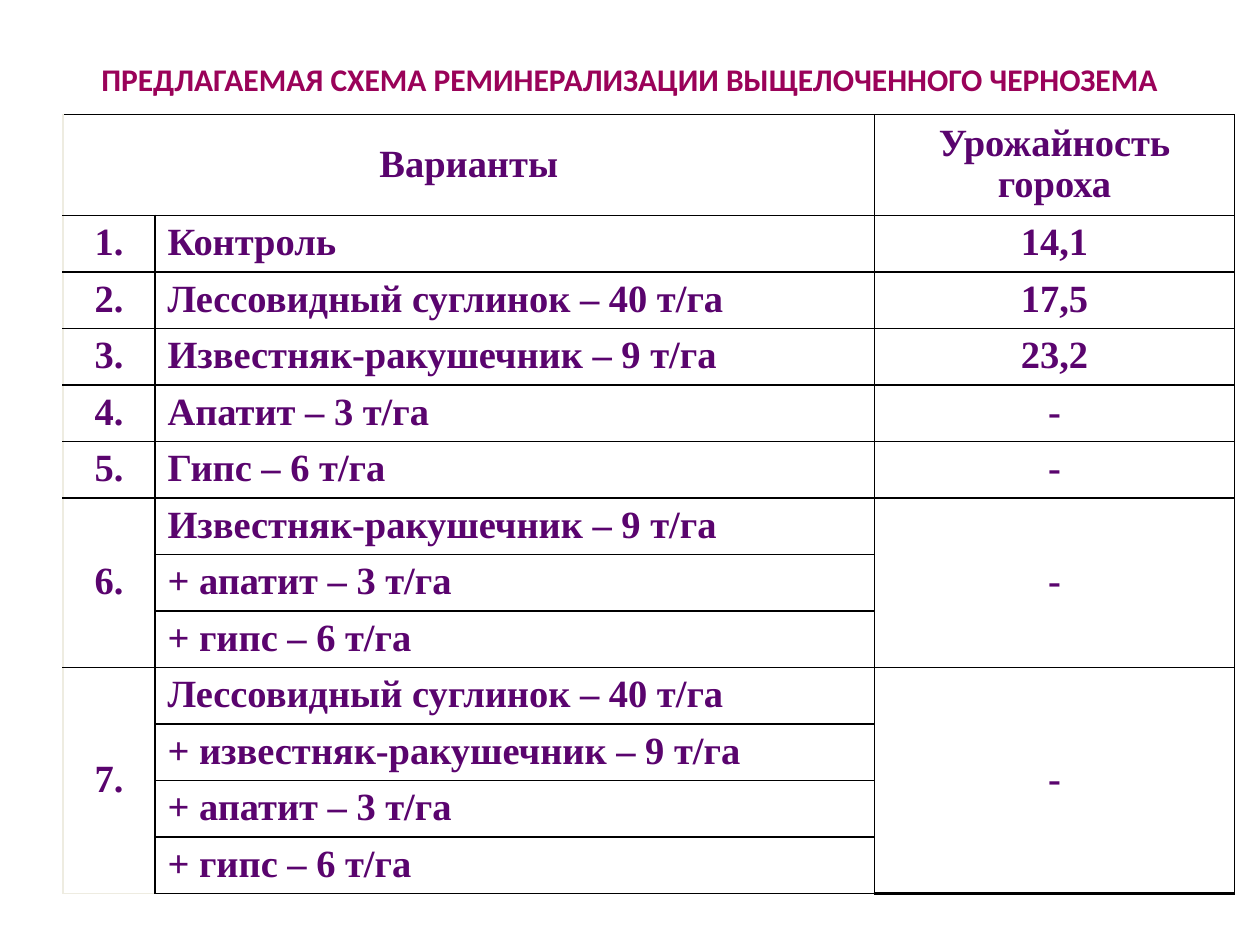
import pptx
import pptx.dml.color
import pptx.enum.text
import pptx.oxml.ns
import pptx.util
from lxml import etree
from pptx.util import Inches

COLORS = {"title": "9A0259", "text": "5A046E", "line": "000000", "pale": "EEECE1"}
ALIGN = pptx.enum.text.PP_ALIGN
MIDDLE = pptx.enum.text.MSO_ANCHOR.MIDDLE

TITLE_FONT = {"name": "Calibri", "size": pptx.util.Pt(18), "bold": True}
TABLE_FONT = {"name": "Times New Roman", "size": pptx.util.Pt(22), "bold": True}

TITLE = "ПРЕДЛАГАЕМАЯ СХЕМА РЕМИНЕРАЛИЗАЦИИ ВЫЩЕЛОЧЕННОГО ЧЕРНОЗЕМА"
HEADINGS = ("Варианты", "Урожайность гороха")
VARIANTS = [
    (["Контроль"], "14,1"),
    (["Лессовидный суглинок – 40 т/га"], "17,5"),
    (["Известняк-ракушечник – 9 т/га"], "23,2"),
    (["Апатит – 3 т/га"], "-"),
    (["Гипс – 6 т/га"], "-"),
    (["Известняк-ракушечник – 9 т/га", "+ апатит – 3 т/га", "+ гипс – 6 т/га"], "-"),
    (["Лессовидный суглинок – 40 т/га", "+ известняк-ракушечник – 9 т/га",
      "+ апатит – 3 т/га", "+ гипс – 6 т/га"], "-"),
]
COLUMN_WIDTHS = (0.73, 5.71, 2.86)
HEADER_HEIGHT, ROW_HEIGHT = 0.8, 0.445


def write(frame, text, font, color, align):
    frame.word_wrap = True
    para = frame.paragraphs[0]
    para.alignment = align
    span = para.add_run()
    span.text = text
    for name, value in font.items():
        setattr(span.font, name, value)
    span.font.color.rgb = pptx.dml.color.RGBColor.from_string(COLORS[color])
    return para


def add_title(page, left, top, width, height):
    box = page.shapes.add_textbox(Inches(left), Inches(top), Inches(width), Inches(height))
    box.text_frame.vertical_anchor = MIDDLE
    write(box.text_frame, TITLE, TITLE_FONT, "title", ALIGN.CENTER)


def set_borders(cell, edges):
    """Draw edges, a dict of side letter to (colour name, points)."""
    properties = cell._tc.get_or_add_tcPr()
    for side in "LRTB":
        if side in edges:
            color, points = edges[side]
            line = etree.SubElement(properties, pptx.oxml.ns.qn(f"a:ln{side}"),
                                    w=str(pptx.util.Pt(points)))
            fill = etree.SubElement(line, pptx.oxml.ns.qn("a:solidFill"))
            etree.SubElement(fill, pptx.oxml.ns.qn("a:srgbClr"), val=COLORS[color])


def fill_cell(cell, text, align=ALIGN.CENTER):
    cell.vertical_anchor = MIDDLE
    write(cell.text_frame, text, TABLE_FONT, "text", align).line_spacing = 0.95


def finish_cell(cell, **changes):
    """Give a cell its borders, black unless changed, and no fill."""
    edges = {side: ("line", 1) for side in "LRTB"} | changes
    set_borders(cell, {side: edge for side, edge in edges.items() if edge})
    cell.fill.background()


def add_header(table):
    table.cell(0, 0).merge(table.cell(0, 1))
    fill_cell(table.cell(0, 0), HEADINGS[0])
    fill_cell(table.cell(0, 2), HEADINGS[1])
    finish_cell(table.cell(0, 0), L=("pale", 1))
    finish_cell(table.cell(0, 1), L=None)
    finish_cell(table.cell(0, 2))


def add_variant(table, first, number, parts, crop, is_last):
    """Fill the rows of one variant, starting at row first."""
    final = first + len(parts) - 1
    if final > first:
        for column in (0, 2):
            table.cell(first, column).merge(table.cell(final, column))
    fill_cell(table.cell(first, 0), f"{number}.")
    fill_cell(table.cell(first, 2), crop)
    number_bottom = ("pale" if is_last else "line", 1)
    crop_bottom = ("line", 2.25 if is_last else 1)
    for row, part in enumerate(parts, first):
        fill_cell(table.cell(row, 1), part, ALIGN.LEFT)
        inner = ("line", 0.75)
        outer = ("line", 1)
        finish_cell(table.cell(row, 1), T=outer if row == first else inner,
                    B=outer if row == final else inner)
        top = outer if row == first else None
        shows_bottom = row in (first, final)
        finish_cell(table.cell(row, 0), L=("pale", 1), T=top,
                    B=number_bottom if shows_bottom else None)
        finish_cell(table.cell(row, 2), T=top, B=crop_bottom if shows_bottom else None)


def add_scheme(page, left, top):
    part_count = sum(len(parts) for parts, crop in VARIANTS)
    height = HEADER_HEIGHT + part_count * ROW_HEIGHT
    table = page.shapes.add_table(
        part_count + 1, len(COLUMN_WIDTHS), Inches(left), Inches(top),
        Inches(sum(COLUMN_WIDTHS)), Inches(height)).table
    table.first_row = table.horz_banding = False
    for column, width in zip(table.columns, COLUMN_WIDTHS):
        column.width = Inches(width)
    for index, row in enumerate(table.rows):
        row.height = Inches(ROW_HEIGHT if index else HEADER_HEIGHT)
    add_header(table)
    first = 1
    for number, (parts, crop) in enumerate(VARIANTS, 1):
        add_variant(table, first, number, parts, crop, number == len(VARIANTS))
        first += len(parts)


def main():
    deck = pptx.Presentation()
    deck.slide_width, deck.slide_height = Inches(10), Inches(7.5)
    page = deck.slides.add_slide(deck.slide_layouts[6])
    add_title(page, 0.5, 0.3, 9, 0.66)
    add_scheme(page, 0.5, 0.91)
    deck.save("out.pptx")


if __name__ == "__main__":
    main()
